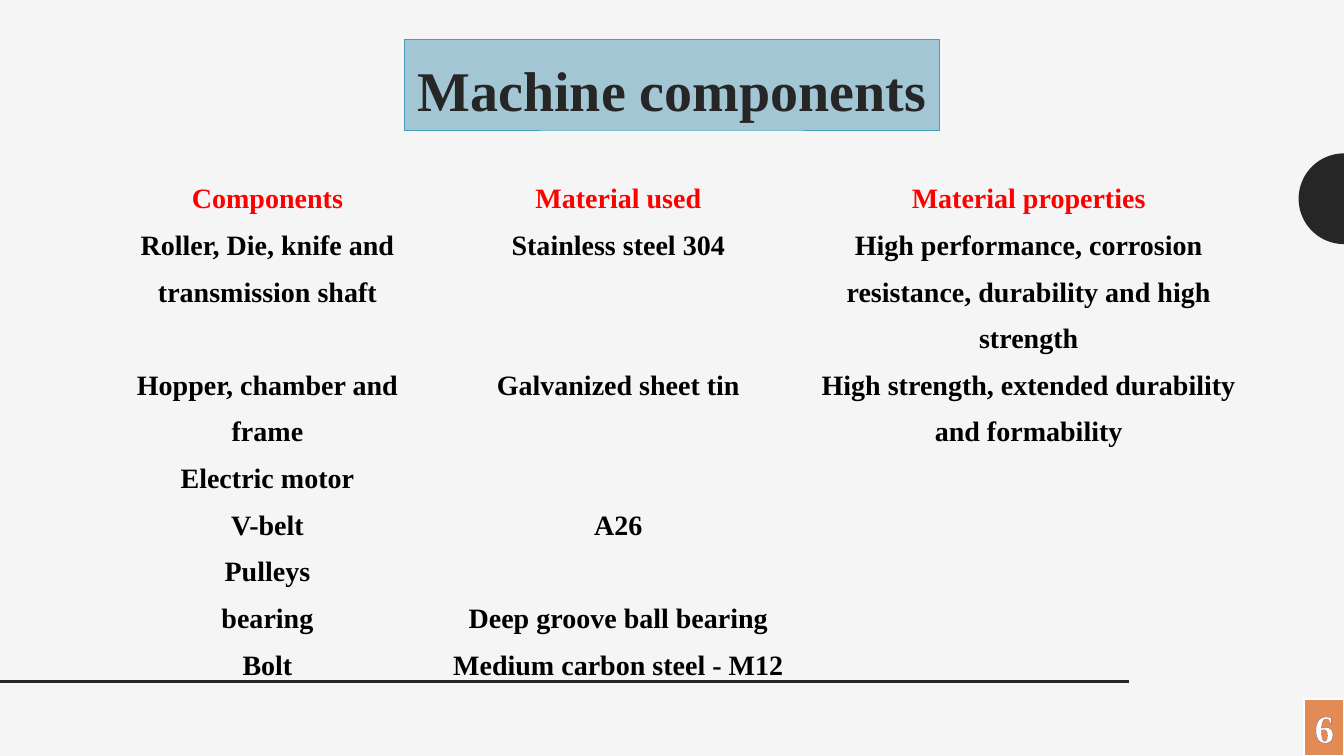
from math import cos, pi, sin

from lxml import etree
from pptx import Presentation
from pptx.dml.color import RGBColor
from pptx.enum.shapes import MSO_CONNECTOR as Connector, MSO_SHAPE as Shape
from pptx.enum.text import MSO_ANCHOR as Anchor, MSO_AUTO_SIZE as AutoSize, PP_ALIGN as Align
from pptx.oxml import parse_xml
from pptx.oxml.ns import nsdecls, qn
from pptx.util import Pt

DARK = "262626"
NO_STYLE_NO_GRID = "{2D5ABB26-0587-4C30-8999-92F81FD0307C}"


def color(hex_value):
    return RGBColor.from_string(hex_value)


def write(paragraph, text, size, hex_value, **paragraph_format):
    """Add one bold run in the slide's font and return it."""
    for name, value in {"alignment": Align.CENTER, **paragraph_format}.items():
        setattr(paragraph, name, value)
    run = paragraph.add_run()
    run.text = text
    for name, value in {"name": "Times New Roman", "size": Pt(size), "bold": True}.items():
        setattr(run.font, name, value)
    run.font.color.rgb = color(hex_value)
    return run


presentation = Presentation()
presentation.slide_width, presentation.slide_height = Pt(960), Pt(540)
slide = presentation.slides.add_slide(presentation.slide_layouts[5])
slide.background.fill.solid()
slide.background.fill.fore_color.rgb = color("F5F5F5")

# Half disc on the right edge
center_x, center_y, radius, steps = 960, 142, 32.4, 48
arc = []
for step in range(steps + 1):
    angle = pi * step / steps
    arc.append((Pt(center_x - radius * sin(angle)), Pt(center_y - radius * cos(angle))))
builder = slide.shapes.build_freeform(*arc[0])
builder.add_line_segments(arc[1:], close=True)
half_disc = builder.convert_to_shape()
half_disc.shadow.inherit = False
half_disc.fill.solid()
half_disc.fill.fore_color.rgb = color(DARK)
half_disc.line.fill.background()

# Footer rule
rule = slide.shapes.add_connector(Connector.STRAIGHT, Pt(806.4), Pt(486.7), Pt(0), Pt(486.7))
rule.line.color.rgb = color(DARK)
rule.line.width = Pt(2)
etree.SubElement(rule._element.spPr, qn("a:effectLst"))

# Title
title = slide.shapes.title
title.left, title.top, title.width, title.height = Pt(288.7), Pt(28.1), Pt(382.3), Pt(64.8)
title.fill.solid()
title.fill.fore_color.rgb = color("A3C6D4")
title.line.color.rgb = color("439EB7")
title.line.width = Pt(0.5)
title.text_frame.auto_size = AutoSize.NONE
title.text_frame.vertical_anchor = Anchor.MIDDLE
write(title.text_frame.paragraphs[0], "Machine components", 40, DARK, line_spacing=1.13)

# Components table
rows = [
    ("Components", "Material used", "Material properties"),
    ("Roller, Die, knife and transmission shaft", "Stainless steel 304",
     "High performance, corrosion resistance, durability and high strength"),
    ("Hopper, chamber and frame", "Galvanized sheet tin",
     "High strength, extended durability and formability"),
    ("Electric motor", "", ""),
    ("V-belt", "A26", ""),
    ("Pulleys", "", ""),
    ("bearing", "Deep groove ball bearing", ""),
    ("Bolt", "Medium carbon steel - M12", ""),
]
lines_per_row = [1, 3, 2, 1, 1, 1, 1, 1]
line_height = 33.2
column_widths = [225.1, 276.2, 310.1]
cell_format = {"margin_left": Pt(5), "margin_right": Pt(5), "margin_top": 0, "margin_bottom": 0}

frame = slide.shapes.add_table(len(rows), len(column_widths), Pt(78.5), Pt(120.2),
                               Pt(sum(column_widths)), Pt(line_height * sum(lines_per_row)))
table = frame.table
table.first_row = table.horz_banding = False
next(frame._element.iter(qn("a:tableStyleId"))).text = NO_STYLE_NO_GRID
for column, width in zip(table.columns, column_widths):
    column.width = Pt(width)
for row_index, (texts, lines) in enumerate(zip(rows, lines_per_row)):
    table.rows[row_index].height = Pt(line_height * lines)
    for column_index, text in enumerate(texts):
        cell = table.cell(row_index, column_index)
        cell.fill.background()
        for name, value in cell_format.items():
            setattr(cell, name, value)
        if text:
            write(cell.text_frame.paragraphs[0], text, 20, "000000" if row_index else "FF0000",
                  line_spacing=1.5, space_after=Pt(8))

# Page number
badge = slide.shapes.add_shape(Shape.RECTANGLE, Pt(931.7), Pt(499), Pt(28.5), Pt(41))
badge.shadow.inherit = False
badge.fill.solid()
badge.fill.fore_color.rgb = color("E28B55")
badge.line.color.rgb = color("FFFFFF")
badge.line.width = Pt(1.5)
badge.text_frame.word_wrap = False
badge.text_frame.auto_size = AutoSize.SHAPE_TO_FIT_TEXT
number = write(badge.text_frame.paragraphs[0], "6", 28, "FFFFFF")
outline = parse_xml(f'<a:ln {nsdecls("a")} w="{Pt(0.8)}"><a:solidFill>'
                    '<a:srgbClr val="835B82"/></a:solidFill></a:ln>')
number.font._element.insert(0, outline)

presentation.save("out.pptx")
